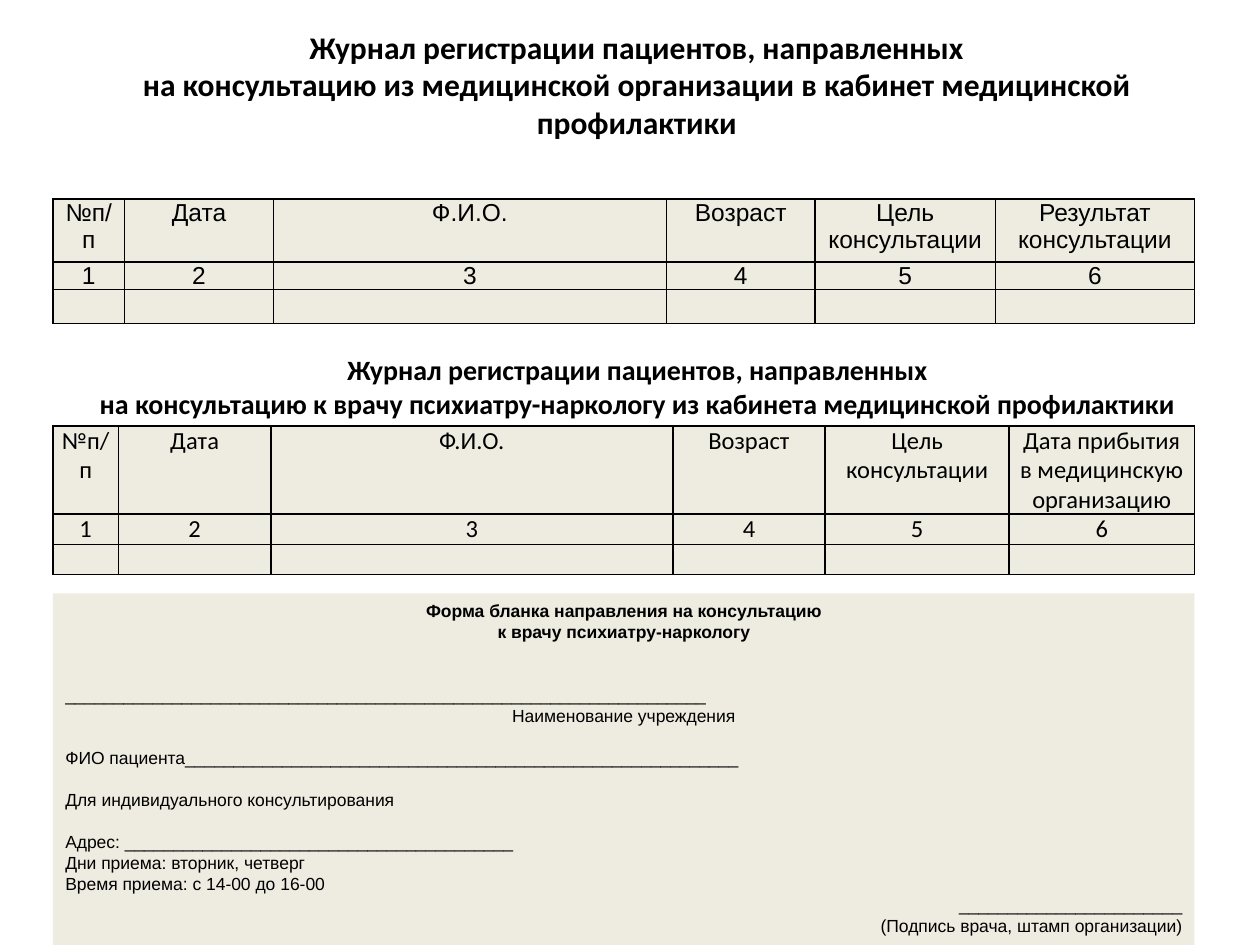
from lxml.etree import SubElement
from pptx import Presentation
from pptx.dml.color import RGBColor
from pptx.enum.shapes import MSO_SHAPE
from pptx.enum.text import MSO_ANCHOR, PP_ALIGN
from pptx.oxml.ns import qn
from pptx.util import Inches, Pt

BLACK = RGBColor(0x00, 0x00, 0x00)
BEIGE = RGBColor(0xEE, 0xEC, 0xE1)
LEFT, WIDTH = 0.42, 9.06
CENTER, START, END = PP_ALIGN.CENTER, PP_ALIGN.LEFT, PP_ALIGN.RIGHT

HEADINGS = ["№п/п", "Дата", "Ф.И.О.", "Возраст", "Цель консультации"]
NUMBERS = ["1", "2", "3", "4", "5", "6"]
FORM_LINES = [
    ("Форма бланка направления на консультацию", CENTER, 0, True),
    ("к врачу психиатру-наркологу", CENTER, 0, True),
    ("_" * 66, START, 2, False),
    ("Наименование учреждения", CENTER, 0, False),
    ("ФИО пациента" + "_" * 57, START, 1, False),
    ("Для индивидуального консультирования", START, 1, False),
    ("Адрес: " + "_" * 40, START, 1, False),
    ("Дни приема: вторник, четверг", START, 0, False),
    ("Время приема: c 14-00 до 16-00", START, 0, False),
    ("_" * 23, END, 0, False),
    ("(Подпись врача, штамп организации)", END, 0, False),
]


def style_paragraph(paragraph, text, font_name, size, alignment=CENTER, bold=False):
    paragraph.text = text
    paragraph.alignment = alignment
    font = paragraph.font
    font.name, font.size, font.bold = font_name, Pt(size), bold
    font.color.rgb = BLACK


def add_paragraph(text_frame, index):
    return text_frame.add_paragraph() if index else text_frame.paragraphs[0]


def add_title(slide, left, top, width, height, size, lines):
    text_frame = slide.shapes.add_textbox(
        Inches(left), Inches(top), Inches(width), Inches(height)).text_frame
    text_frame.word_wrap = True
    for index, line in enumerate(lines):
        style_paragraph(add_paragraph(text_frame, index), line, "Calibri", size, bold=True)


def set_borders(cell):
    properties = cell._tc.get_or_add_tcPr()
    for position, side in enumerate(("a:lnL", "a:lnR", "a:lnT", "a:lnB")):
        line = properties.makeelement(qn(side), {"w": str(Pt(1))})
        fill = SubElement(line, qn("a:solidFill"))
        SubElement(fill, qn("a:srgbClr"), {"val": str(BLACK)})
        properties.insert(position, line)


def add_journal(slide, top, font_name, last_heading, widths, heights):
    rows = [HEADINGS + [last_heading], NUMBERS, [""] * len(widths)]
    table = slide.shapes.add_table(
        len(rows), len(widths), Inches(LEFT), Inches(top),
        Inches(WIDTH), Inches(sum(heights))).table
    table.first_row = table.horz_banding = False
    for column, width in zip(table.columns, widths):
        column.width = Inches(width)
    for row, height, texts in zip(table.rows, heights, rows):
        row.height = Inches(height)
        for cell, text in zip(row.cells, texts):
            cell.margin_left = cell.margin_right = Inches(0.07)
            cell.margin_top = cell.margin_bottom = 0
            cell.fill.solid()
            cell.fill.fore_color.rgb = BEIGE
            set_borders(cell)
            style_paragraph(cell.text_frame.paragraphs[0], text, font_name, 14)


def add_referral_form(slide):
    shape = slide.shapes.add_shape(
        MSO_SHAPE.RECTANGLE, Inches(LEFT), Inches(4.71), Inches(WIDTH), Inches(2.79))
    shape.shadow.inherit = False
    shape.fill.solid()
    shape.fill.fore_color.rgb = BEIGE
    shape.line.fill.background()
    text_frame = shape.text_frame
    text_frame.word_wrap = True
    text_frame.vertical_anchor = MSO_ANCHOR.TOP
    for index, (text, alignment, skipped_lines, bold) in enumerate(FORM_LINES):
        paragraph = add_paragraph(text_frame, index)
        style_paragraph(paragraph, text, "Arial", 10, alignment, bold)
        paragraph.space_before = Pt(12 * skipped_lines)


def main():
    """Build the slide with two patient journals and a referral form."""
    presentation = Presentation()
    presentation.slide_width, presentation.slide_height = Inches(10), Inches(7.5)
    slide = presentation.slides.add_slide(presentation.slide_layouts[6])
    add_journal(slide, 1.58, "Arial", "Результат консультации",
                [0.57, 1.18, 3.12, 1.18, 1.43, 1.58], [0.5, 0.22, 0.27])
    add_title(slide, 0.64, 0.17, 8.83, 1.31, 18, [
        "Журнал регистрации пациентов, направленных",
        "на консультацию из медицинской организации в кабинет медицинской профилактики"])
    add_journal(slide, 3.38, "Calibri", "Дата прибытия в медицинскую организацию",
                [0.52, 1.21, 3.19, 1.21, 1.46, 1.47], [0.7, 0.24, 0.24])
    add_title(slide, 0.56, 2.75, 9, 0.94, 16, [
        "Журнал регистрации пациентов, направленных",
        "на консультацию к врачу психиатру-наркологу из кабинета медицинской профилактики"])
    add_referral_form(slide)
    presentation.save("out.pptx")


main()
